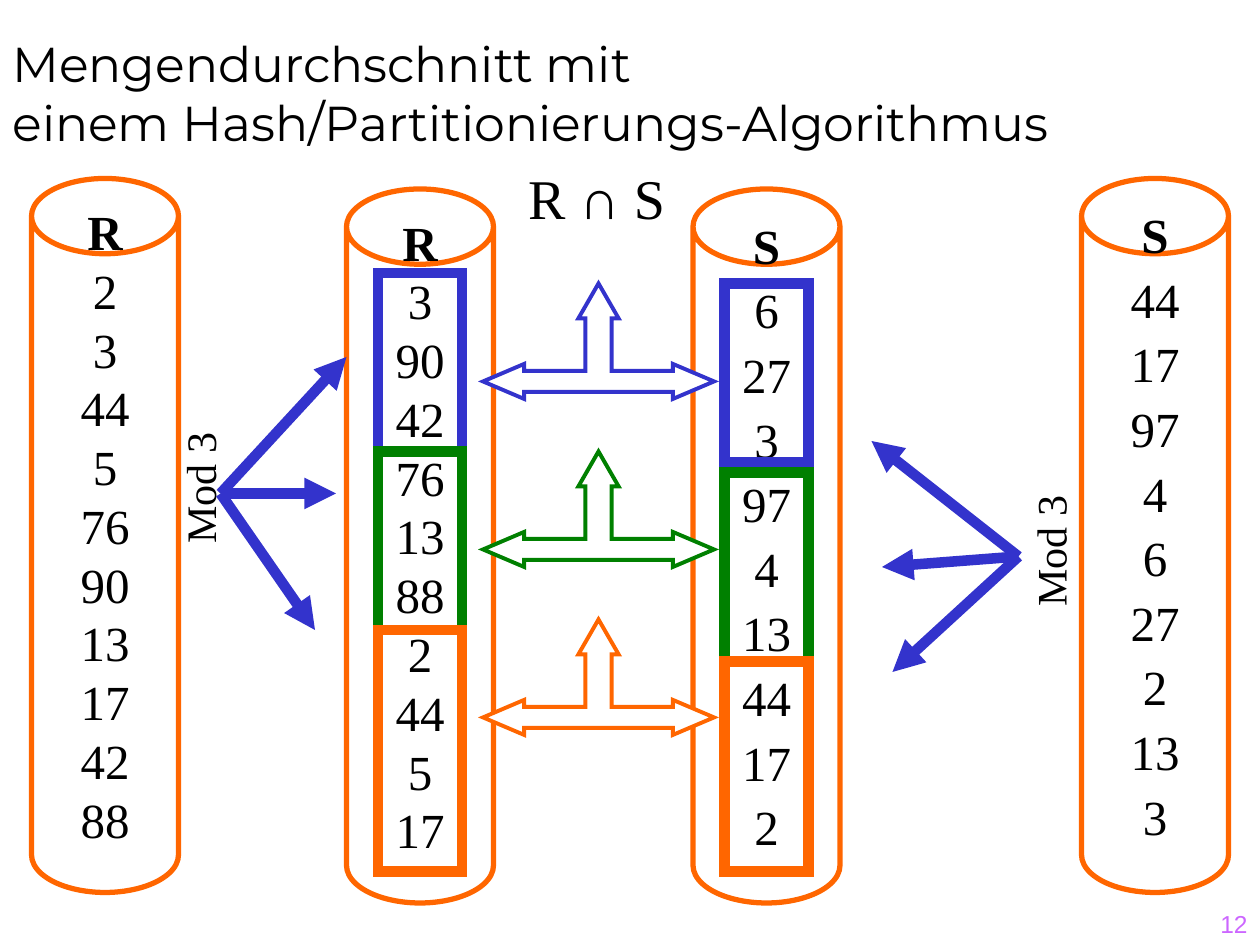
from pptx import Presentation
from pptx.dml.color import RGBColor
from pptx.enum.shapes import MSO_CONNECTOR, MSO_SHAPE
from pptx.enum.text import MSO_ANCHOR, PP_ALIGN
from pptx.oxml.ns import qn
from pptx.util import Pt
from lxml.etree import SubElement

BLUE, GREEN, ORANGE = "3333CC", "008000", "FF6600"
BLACK, WHITE, PINK = "000000", "FFFFFF", "CC66FF"
SERIF = "Times New Roman"

TITLE = "Mengendurchschnitt mit \veinem Hash/Partitionierungs-Algorithmus"

# left, top, line pitch, heading, values
CANS = [
    (18, 102, 33.6, "R", [2, 3, 44, 5, 76, 90, 13, 17, 42, 88]),
    (618, 102, 36.9, "S", [44, 17, 97, 4, 6, 27, 2, 13, 3]),
    (198, 108, 33.6, "R", [3, 90, 42, 76, 13, 88, 2, 44, 5, 17]),
    (396, 108, 36.9, "S", [6, 27, 3, 97, 4, 13, 44, 17, 2]),
]
# left, then top and bottom of each partition
PARTS = [
    (216, [(156, 258), (258, 360), (360, 498)]),
    (414, [(162, 264), (270, 378), (378, 498)]),
]
# start, ends
FANS = [
    ((126, 282), [(198, 204), (192, 282), (180, 360)]),
    ((582, 318), [(498, 252), (504, 324), (510, 384)]),
]
# text, left, top, width, height, size, rotation
LABELS = [
    ("R ∩ S", 294, 90, 94, 45, 32, 0),
    ("Mod 3", 75, 261, 78, 36, 24, 270),
    ("Mod 3", 561, 297, 78, 36, 24, 270),
]
# right half of the three-way arrow, from its tip
HALF = [(0, 0), (11.5, 20), (7.5, 20), (7.5, 50), (42.5, 50),
        (42.5, 46), (66, 56), (42.5, 66), (42.5, 62)]
TIP_X, TIP_Y, STEP = 342, 162, 96


def rgb(color):
    return RGBColor.from_string(color)


def style(par, size, font, color=BLACK, align=PP_ALIGN.CENTER, bold=False):
    par.alignment = align
    for run in par.runs:
        run.font.size = Pt(size)
        run.font.name = font
        run.font.bold = bold
        run.font.color.rgb = rgb(color)


def paint(shape, line, width, fill=None):
    shape.shadow.inherit = False
    if fill:
        shape.fill.solid()
        shape.fill.fore_color.rgb = rgb(fill)
    else:
        shape.fill.background()
    shape.line.color.rgb = rgb(line)
    shape.line.width = Pt(width)
    SubElement(shape.line._get_or_add_ln(), qn("a:miter"), lim="800000")


def add_can(left, top, pitch, head, values):
    can = shapes.add_shape(MSO_SHAPE.CAN, Pt(left), Pt(top), Pt(84), Pt(408))
    can.adjustments[0] = 0.512
    paint(can, ORANGE, 3, WHITE)
    frame = can.text_frame
    frame.word_wrap = False
    frame.vertical_anchor = MSO_ANCHOR.MIDDLE
    frame.margin_bottom = Pt(3.6 + pitch)
    frame.text = "\n".join([head, *map(str, values)])
    for i, par in enumerate(frame.paragraphs):
        style(par, 28, SERIF, bold=i == 0)
        par.line_spacing = Pt(pitch)


def add_label(text, left, top, width, height, size, turn):
    box = shapes.add_textbox(Pt(left), Pt(top), Pt(width), Pt(height))
    box.rotation = turn
    box.text_frame.word_wrap = False
    box.text_frame.text = text
    style(box.text_frame.paragraphs[0], size, SERIF)


def add_arrow(start, end):
    line = shapes.add_connector(MSO_CONNECTOR.STRAIGHT, *map(Pt, start + end))
    line.line.color.rgb = rgb(BLUE)
    line.line.width = Pt(6)
    SubElement(line.line._get_or_add_ln(), qn("a:tailEnd"), type="triangle")
    SubElement(line._element.spPr, qn("a:effectLst"))


def add_fork(top, color):
    """Block arrow that points left, right and up."""
    ring = HALF + [(-x, y) for x, y in reversed(HALF[1:])]
    points = [(Pt(TIP_X + x), Pt(top + y)) for x, y in ring]
    path = shapes.build_freeform(*points[0])
    path.add_line_segments(points[1:], close=True)
    paint(path.convert_to_shape(), color, 2.25, WHITE)


prs = Presentation()
prs.slide_width, prs.slide_height = Pt(720), Pt(540)
slide = prs.slides.add_slide(prs.slide_layouts[5])
shapes = slide.shapes

title = shapes.title
title.left, title.top, title.width, title.height = Pt(0), Pt(0), Pt(720), Pt(90)
title.text_frame.text = TITLE
title.text_frame.vertical_anchor = MSO_ANCHOR.BOTTOM
style(title.text_frame.paragraphs[0], 28, "Montserrat", align=PP_ALIGN.LEFT)

number = shapes.add_textbox(Pt(570), Pt(504), Pt(150), Pt(36)).text_frame
number.word_wrap = True
number.vertical_anchor = MSO_ANCHOR.BOTTOM
number.text = "12"
style(number.paragraphs[0], 14, "Arial", PINK, PP_ALIGN.RIGHT)

for can in CANS:
    add_can(*can)
for label in LABELS:
    add_label(*label)
for start, ends in FANS:
    for end in ends:
        add_arrow(start, end)
for left, spans in PARTS:
    for (top, bottom), color in zip(spans, (BLUE, GREEN, ORANGE)):
        box = shapes.add_shape(MSO_SHAPE.RECTANGLE, Pt(left), Pt(top),
                               Pt(48), Pt(bottom - top))
        paint(box, color, 6)
for i, color in enumerate((BLUE, GREEN, ORANGE)):
    add_fork(TIP_Y + i * STEP, color)

prs.save("out.pptx")
